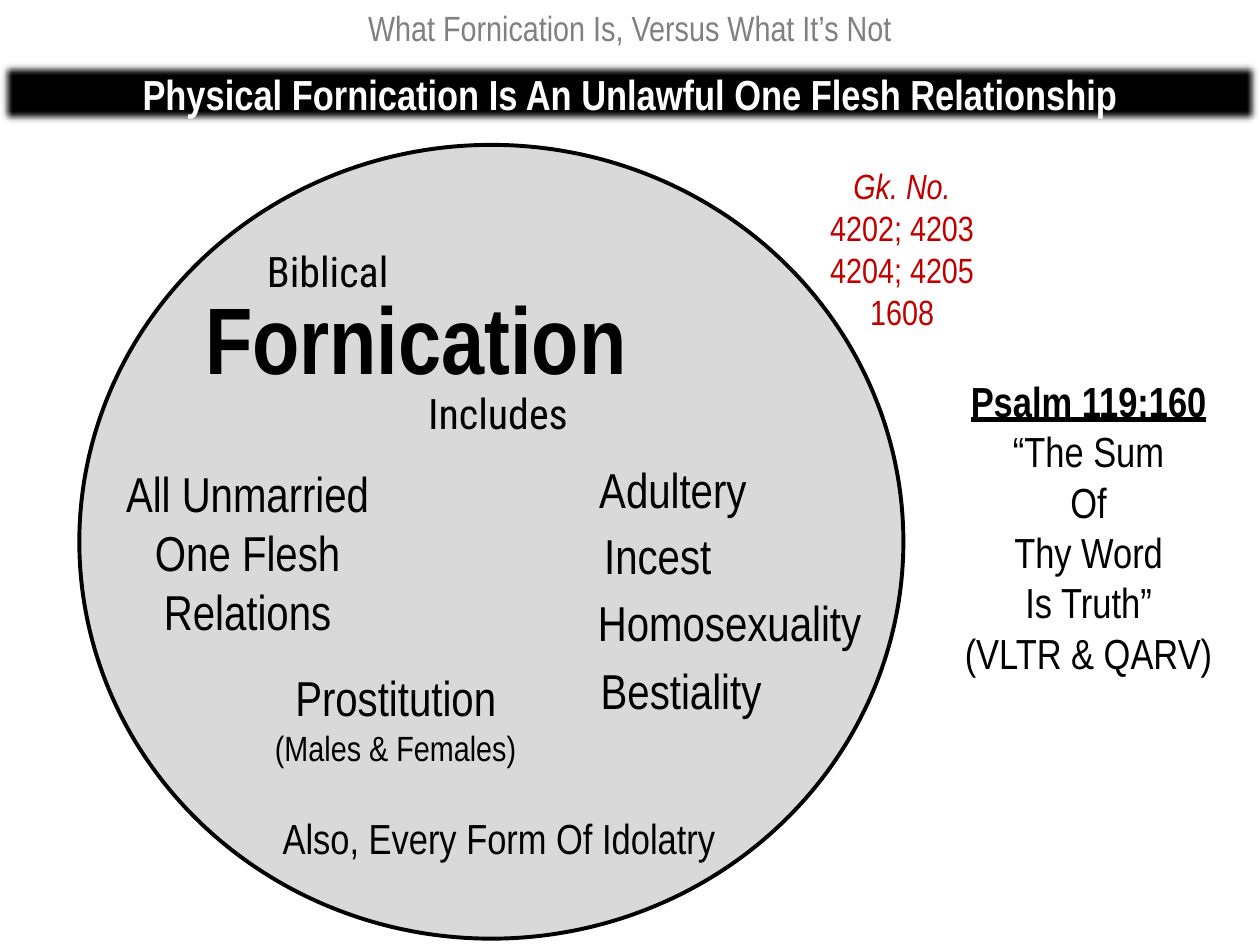
from lxml import etree
from pptx import Presentation
from pptx.dml.color import RGBColor
from pptx.enum.shapes import MSO_SHAPE
from pptx.enum.text import MSO_ANCHOR, PP_ALIGN
from pptx.oxml.ns import qn
from pptx.util import Inches, Pt

NARROW, ROBOTO = "Arial Narrow", "Roboto Condensed"
BLACK, WHITE, GREY, SILVER, RED = "000000", "FFFFFF", "808080", "D9D9D9", "C00000"


def rgb(color):
    return RGBColor.from_string(color)


def add_panel(slide, kind, box, fill=None, line=None):
    panel = slide.shapes.add_shape(kind, *map(Inches, box))
    panel.shadow.inherit = False
    if fill:
        panel.fill.solid()
        panel.fill.fore_color.rgb = rgb(fill)
    else:
        panel.fill.background()
    if line:
        panel.line.color.rgb = rgb(line)
        panel.line.width = Pt(2.25)
    else:
        panel.line.fill.background()
    return panel


def add_runs(paragraph, text, **style):
    """Add one run per line of text, with line breaks between them."""
    for number, line in enumerate(text.split("\n")):
        if number:
            paragraph.add_line_break()
        if line:
            run = paragraph.add_run()
            run.text = line
            for name, value in style.items():
                setattr(run.font, name, value)


def write(frame, paragraphs, size, color=BLACK, font=NARROW, bold=False,
          align=PP_ALIGN.CENTER):
    """Each paragraph is a string or a list of (text, run style) pairs."""
    frame.word_wrap = True
    for number, content in enumerate(paragraphs):
        paragraph = frame.add_paragraph() if number else frame.paragraphs[0]
        paragraph.alignment = align
        paragraph.font.name = font
        paragraph.font.size = Pt(size)
        paragraph.font.bold = bold
        paragraph.font.color.rgb = rgb(color)
        parts = [(content, {})] if isinstance(content, str) else content
        for text, style in parts:
            add_runs(paragraph, text, **style)


def add_label(slide, box, content, size, **style):
    label = slide.shapes.add_textbox(*map(Inches, box))
    write(label.text_frame, [content], size, **style)


def add_heading(slide, left, top, width):
    # Soft-edged banner
    banner = add_panel(slide, MSO_SHAPE.RECTANGLE, (left, top + 0.49, width, 0.5), BLACK)
    effects = banner.element.spPr.find(qn("a:effectLst"))
    etree.SubElement(effects, qn("a:softEdge"), rad=str(Pt(5)))
    write(banner.text_frame,
          ["Physical Fornication Is An Unlawful One Flesh Relationship"],
          24, WHITE, bold=True)
    # Series title
    add_label(slide, (left, top, width, 0.44),
              "What Fornication Is, Versus What It’s Not", 20, color=GREY)


def add_circle(slide, left, top, width, height):
    add_panel(slide, MSO_SHAPE.OVAL, (left, top, width, height), SILVER, BLACK)

    def label(x, y, w, h, content, size=28, **style):
        add_label(slide, (left + x, top + y, w, h), content, size, **style)

    # Central term
    label(0.9, 1.02, 3.6, 1.01, "Fornication", 54, bold=True, align=PP_ALIGN.JUSTIFY)
    for x, y, word in ((1.39, 0.75, "Biblical"), (2.67, 1.88, "Includes")):
        label(x, y, 2.16, 0.5, word, 24, font=ROBOTO, align=PP_ALIGN.LEFT)

    # What the term includes
    for x, y, w, word in (
        (3.9, 2.45, 1.62, "Adultery"),
        (3.37, 2.97, 2.44, "Incest"),
        (3.94, 3.5, 2.44, "Homosexuality"),
        (3.96, 4.04, 1.63, "Bestiality"),
    ):
        label(x, y, w, 0.57, word)
    label(0, 2.48, 2.67, 1.51, "All Unmarried\nOne Flesh Relations")
    label(1.09, 4.1, 2.84, 0.91,
          [("Prostitution\n", {}), ("(Males & Females)", {"size": Pt(20)})])
    label(1.33, 5.25, 4, 0.5, "Also, Every Form Of Idolatry", 24)


def add_psalm(slide, *box):
    add_label(slide, box, [
        ("Psalm 119:160", {"bold": True, "underline": True}),
        (" “The Sum\nOf\nThy Word\nIs Truth”\n(VLTR & QARV)", {}),
    ], 24)


def add_greek_numbers(slide, *box):
    numbers = add_panel(slide, MSO_SHAPE.ROUNDED_RECTANGLE, box)
    numbers.text_frame.vertical_anchor = MSO_ANCHOR.MIDDLE
    write(numbers.text_frame,
          [[("Gk. No.\n", {"italic": True}), ("4202; 4203", {})], "4204; 4205", "1608"],
          20, RED)


def main():
    deck = Presentation()
    deck.slide_width, deck.slide_height = Inches(10), Inches(7.5)
    slide = deck.slides.add_slide(deck.slide_layouts[6])
    add_heading(slide, 0, 0, 10)
    add_circle(slide, 0.63, 1.15, 6.54, 6.3)
    add_psalm(slide, 7.51, 2.93, 2.26, 2.83)
    add_greek_numbers(slide, 5.88, 0.93, 2.56, 2.08)
    deck.save("out.pptx")


if __name__ == "__main__":
    main()
